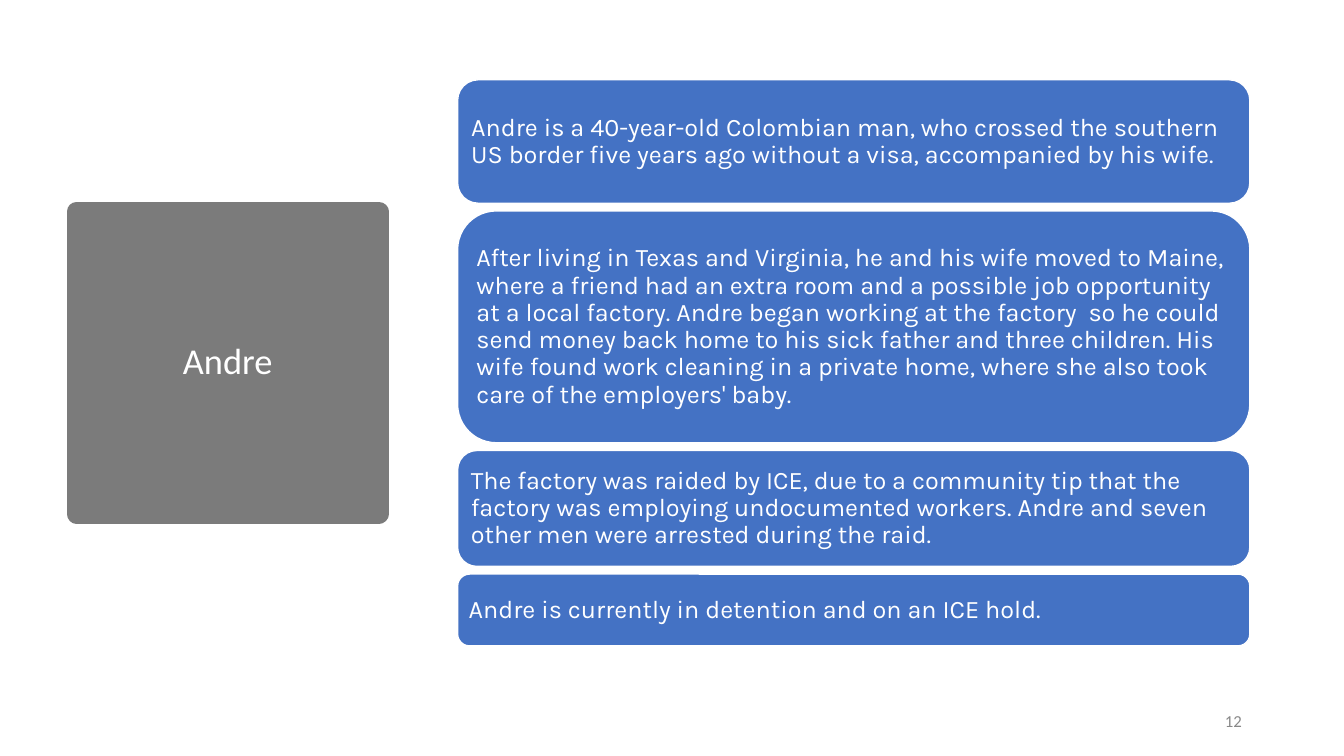
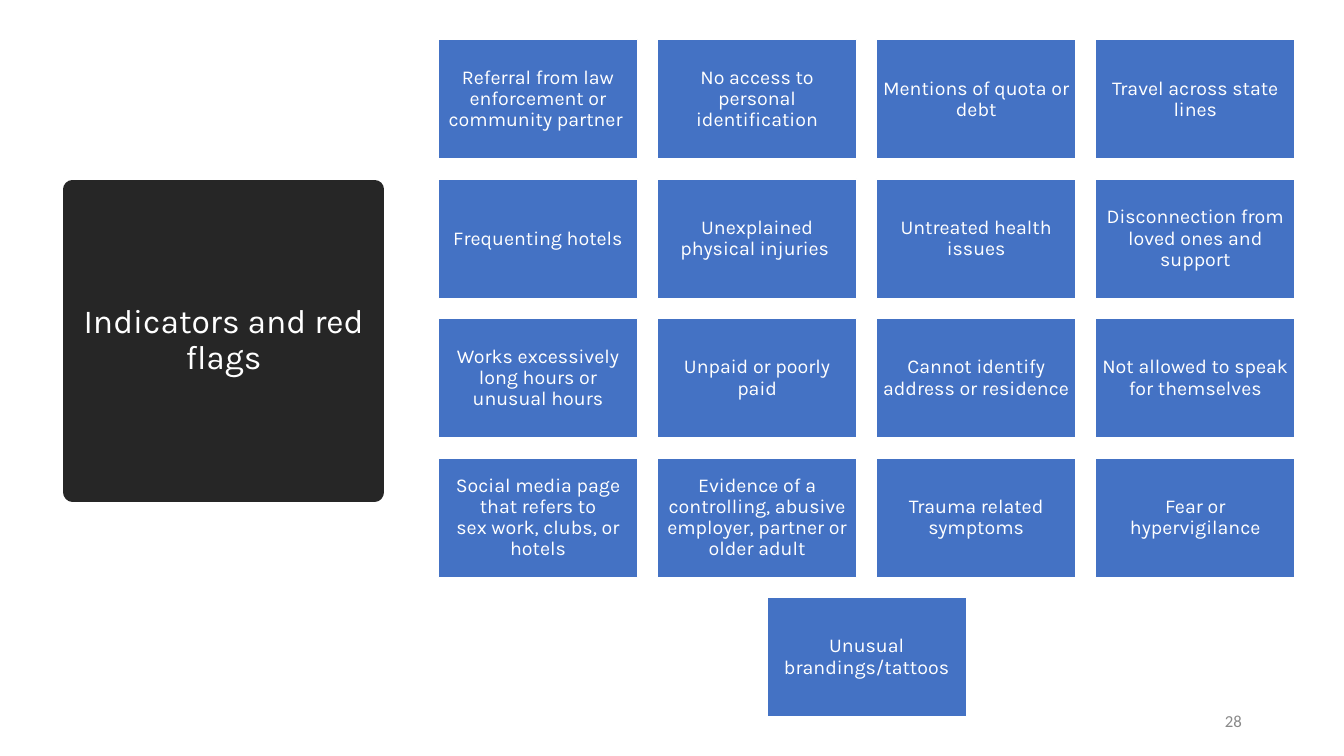
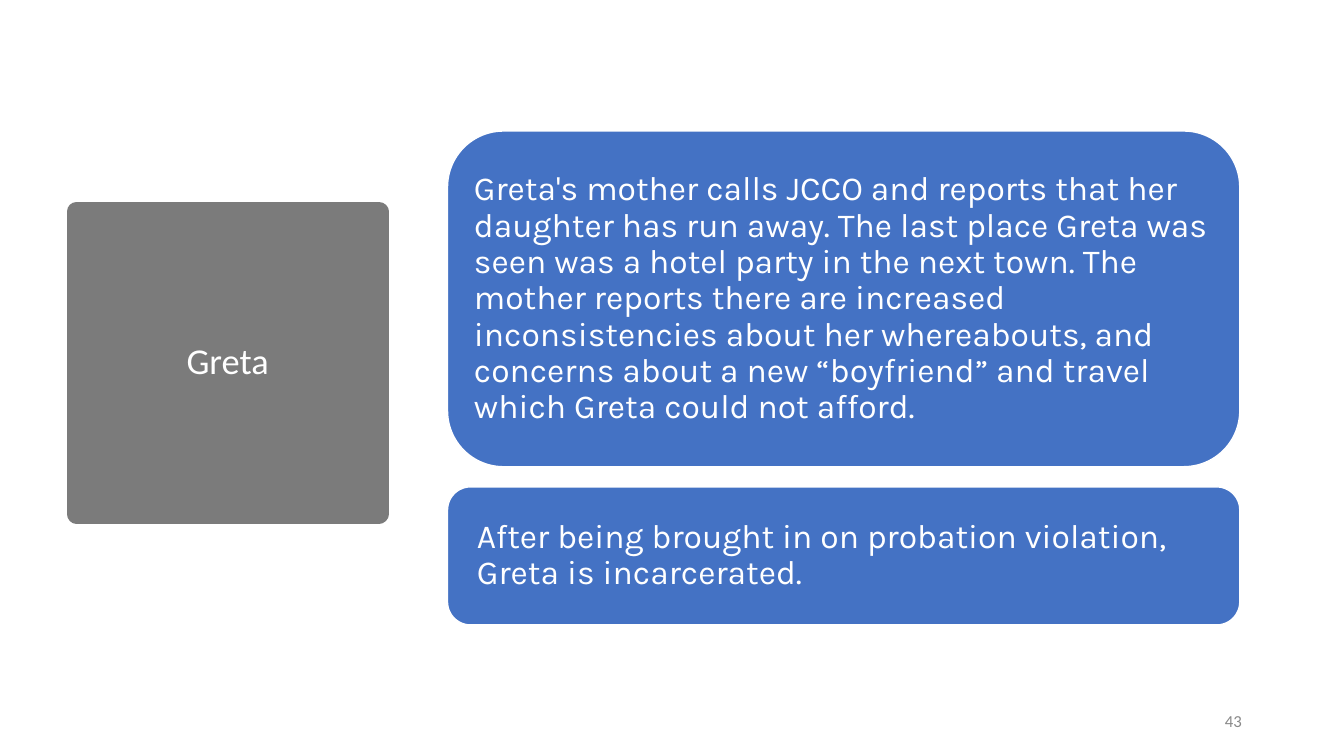
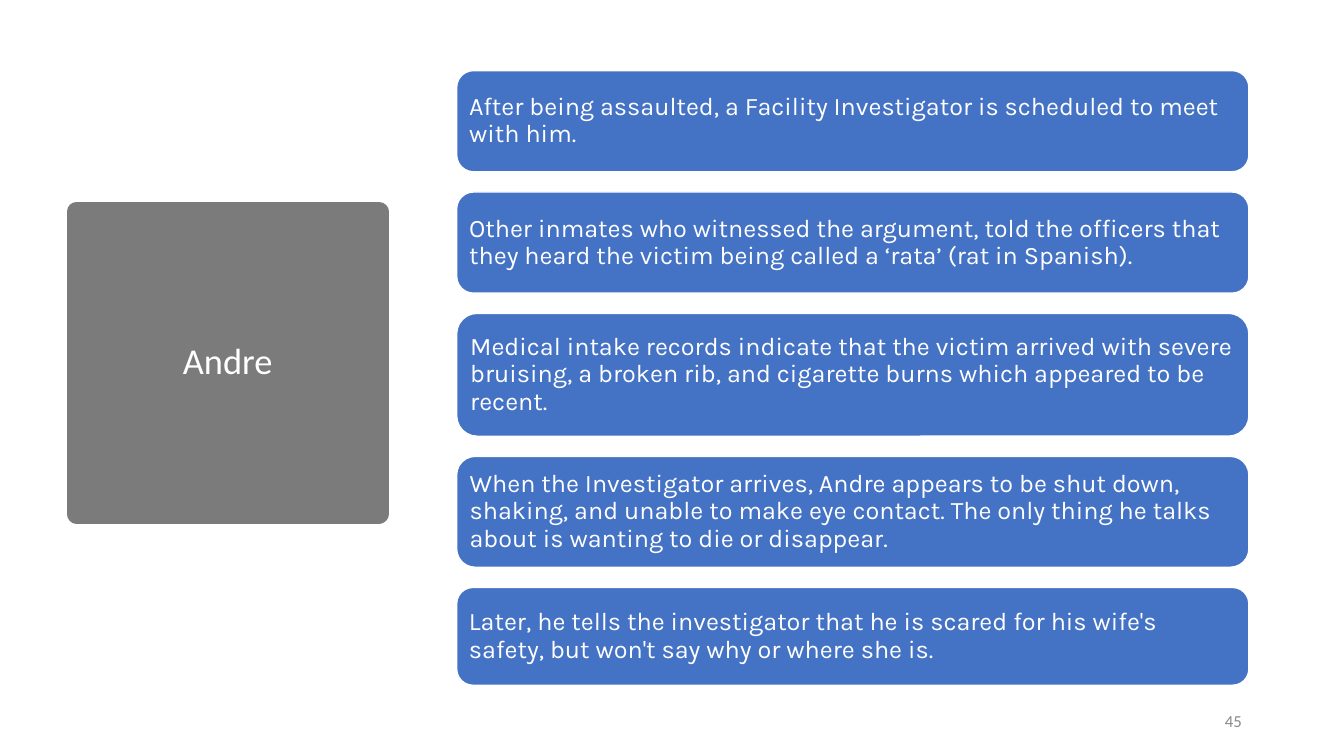
from lxml import etree
from pptx import Presentation
from pptx.dml.color import RGBColor
from pptx.enum.shapes import MSO_SHAPE
from pptx.enum.text import MSO_ANCHOR, PP_ALIGN
from pptx.oxml.ns import qn
from pptx.util import Pt

RECTANGLE, ROUNDED = MSO_SHAPE.RECTANGLE, MSO_SHAPE.ROUNDED_RECTANGLE
LEFT, CENTER, RIGHT = PP_ALIGN.LEFT, PP_ALIGN.CENTER, PP_ALIGN.RIGHT
MIDDLE = MSO_ANCHOR.MIDDLE

# Shared style
WHITE, BLUE, GRAY, BLACK, PALE = "FFFFFF", "4472C4", "7B7B7B", "262626", "898989"
BODY_FONT, PLAIN_FONT = "Karla", "Calibri"
TITLE_SIDE, TITLE_BORDER = 216, 13.75
CARD_WIDTH = 565.9
LINE_SPACING = 0.9
INSET_RATIO = 0.3  # card inset relative to text size

# Grid of indicators
GRID_LEFT, GRID_TOP, GRID_COLUMNS = 313.2, 28.2, 4
CELL_WIDTH, CELL_HEIGHT, CELL_GAP = 142.3, 85.4, 14.2

ANDRE_STORY = [
    (88.2, "Andre is a 40-year-old Colombian man, who crossed the southern US border "
           "five years ago without a visa, accompanied by his wife."),
    (165.6, "After living in Texas and Virginia, he and his wife moved to Maine, where a "
            "friend had an extra room and a possible job opportunity at a local factory. "
            "Andre began working at the factory  so he could send money back home to his "
            "sick father and three children. His wife found work cleaning in a private "
            "home, where she also took care of the employers' baby."),
    (82.8, "The factory was raided by ICE, due to a community tip that the factory was "
           "employing undocumented workers. Andre and seven other men were arrested "
           "during the raid."),
    (51.3, "Andre is currently in detention and on an ICE hold."),
]
INDICATORS = [
    "Referral from law enforcement or community partner ",
    "No access to personal identification",
    "Mentions of quota or debt",
    "Travel across state lines",
    "Frequenting hotels",
    "Unexplained physical injuries ",
    "Untreated health issues",
    "Disconnection from loved ones and support",
    "Works excessively long hours or unusual hours",
    "Unpaid or poorly paid",
    "Cannot identify address or residence",
    "Not allowed to speak for themselves",
    "Social media page that refers to\nsex work, clubs, or hotels",
    "Evidence of a controlling, abusive employer, partner or older adult",
    "Trauma related symptoms",
    "Fear or hypervigilance",
    "Unusual brandings/tattoos",
]
GRETA_STORY = [
    (239.8, "Greta's mother calls JCCO and reports that her daughter has run away. The last "
            "place Greta was seen was a hotel party in the next town. The mother reports "
            "there are increased inconsistencies about her whereabouts, and concerns about "
            "a new “boyfriend” and travel which Greta could not afford."),
    (98.6, "After being brought in on probation violation, Greta is incarcerated. "),
]
ANDRE_DETENTION = [
    (72.3, "After being assaulted, a Facility Investigator is scheduled to meet with him."),
    (72.3, "Other inmates who witnessed the argument, told the officers that they heard the "
           "victim being called a ‘rata’ (rat in Spanish)."),
    (87.8, "Medical intake records indicate that the victim arrived with severe bruising, a "
           "broken rib, and cigarette burns which appeared to be recent."),
    (79.2, "When the Investigator arrives, Andre appears to be shut down, shaking, and unable "
           "to make eye contact. The only thing he talks about is wanting to die or "
           "disappear."),
    (69.9, "Later, he tells the investigator that he is scared for his wife's safety, but "
           "won't say why or where she is."),
]


def color(hex_value):
    return RGBColor.from_string(hex_value)


def write(shape, text, font, size, ink, align, spacing=LINE_SPACING):
    frame = shape.text_frame
    frame.text = text
    frame.word_wrap = True
    frame.vertical_anchor = MIDDLE
    for paragraph in frame.paragraphs:
        paragraph.alignment = align
        paragraph.line_spacing = spacing
        paragraph.font.name = font
        paragraph.font.size = Pt(size)
        paragraph.font.color.rgb = color(ink)


def add_block(slide, kind, left, top, width, height, fill, border, border_width):
    block = slide.shapes.add_shape(kind, Pt(left), Pt(top), Pt(width), Pt(height))
    block.shadow.inherit = False
    block.fill.solid()
    block.fill.fore_color.rgb = color(fill)
    block.line.color.rgb = color(border)
    block.line.width = Pt(border_width)
    return block


def add_title(slide, text, left=54.7, top=151.2, fill=GRAY, font=PLAIN_FONT, size=26):
    title = add_block(slide, RECTANGLE, left, top, TITLE_SIDE, TITLE_SIDE,
                      fill, fill, TITLE_BORDER)
    # The thick border's round joins give the soft corners
    etree.SubElement(title.line._get_or_add_ln(), qn("a:round"))
    write(title, text, font, size, WHITE, CENTER)


def add_card(slide, kind, left, top, width, height, text, size, align):
    card = add_block(slide, kind, left, top, width, height, BLUE, WHITE, 1)
    write(card, text, BODY_FONT, size, WHITE, align)
    frame = card.text_frame
    frame.margin_left = frame.margin_right = Pt(size * INSET_RATIO)
    frame.margin_top = frame.margin_bottom = Pt(size * INSET_RATIO)
    return card


def add_story(slide, story, left, top, gap, size=18):
    """Stack the cards from the top and return them."""
    cards = []
    for height, text in story:
        cards.append(add_card(slide, ROUNDED, left, top, CARD_WIDTH, height,
                              text, size, LEFT))
        top += height + gap
    return cards


def add_indicator_grid(slide, indicators):
    step_x, step_y = CELL_WIDTH + CELL_GAP, CELL_HEIGHT + CELL_GAP
    for start in range(0, len(indicators), GRID_COLUMNS):
        row = indicators[start:start + GRID_COLUMNS]
        top = GRID_TOP + start // GRID_COLUMNS * step_y
        # A short row is centred
        row_left = GRID_LEFT + (GRID_COLUMNS - len(row)) * step_x / 2
        for column, text in enumerate(row):
            add_card(slide, RECTANGLE, row_left + column * step_x, top,
                     CELL_WIDTH, CELL_HEIGHT, text, 14, CENTER)


def add_page_number(slide, number):
    footer = slide.shapes.add_textbox(Pt(678.2), Pt(500.4), Pt(216), Pt(28.8))
    write(footer, str(number), PLAIN_FONT, 12, PALE, RIGHT, spacing=1.0)


def add_slide(deck, number):
    slide = deck.slides.add_slide(deck.slide_layouts[6])
    add_page_number(slide, number)
    return slide


def main():
    deck = Presentation()
    deck.slide_width, deck.slide_height = Pt(960), Pt(540)

    # Andre: background
    slide = add_slide(deck, 12)
    add_title(slide, "Andre")
    add_story(slide, ANDRE_STORY, left=326.9, top=57, gap=5.5)

    # Indicators
    slide = add_slide(deck, 28)
    add_title(slide, "Indicators and red flags", left=51.8, top=135.4,
              fill=BLACK, font=BODY_FONT, size=24)
    add_indicator_grid(slide, INDICATORS)

    # Greta
    slide = add_slide(deck, 43)
    add_title(slide, "Greta")
    cards = add_story(slide, GRETA_STORY, left=319.7, top=93.6, gap=14.4, size=24)
    outcome = cards[-1].text_frame.paragraphs[0]
    outcome._p.get_or_add_pPr().set("marL", str(Pt(9)))

    # Andre: detention
    slide = add_slide(deck, 45)
    add_title(slide, "Andre")
    add_story(slide, ANDRE_DETENTION, left=326.2, top=50.4, gap=14.4)

    deck.save("out.pptx")


if __name__ == "__main__":
    main()
